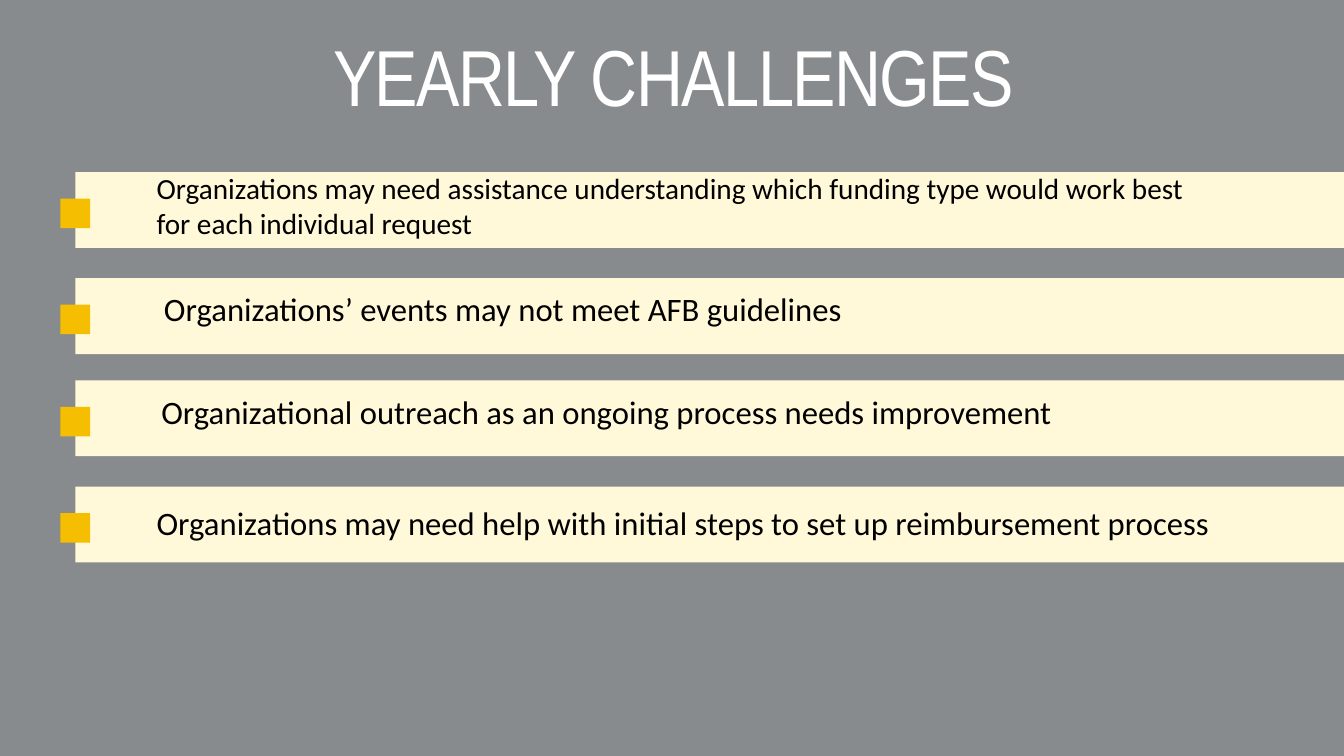
from pptx import Presentation
from pptx.dml.color import RGBColor
from pptx.enum.shapes import MSO_SHAPE as Shape
from pptx.enum.text import MSO_ANCHOR as Anchor, MSO_AUTO_SIZE as AutoSize, PP_ALIGN as Align
from pptx.util import Inches, Pt

W, H = Inches(20), Inches(11.25)
GREY = RGBColor(0x88, 0x8B, 0x8D)
CREAM = RGBColor(0xFF, 0xF9, 0xD9)
GOLD = RGBColor(0xF6, 0xBE, 0x00)
BLACK = RGBColor(0x00, 0x00, 0x00)
WHITE = RGBColor(0xFF, 0xFF, 0xFF)

BAR_X, BAR_H = 5.6, 10.04
MARK_X, MARK_DY, MARK_W, MARK_H = 4.5, 3.5, 2.2, 3.91

# Bar top, text left, top, width and height in percent of the slide; size and leading in points
CHALLENGES = [
    (22.76, (11.65, 22.49, 77.55, 9.96), 31.3, 37.5,
     "Organizations may need assistance understanding which funding type "
     "would work best for each individual request"),
    (36.8, (12.2, 38.22, 82.4, 5.96), 35, 42,
     "Organizations’ events may not meet AFB guidelines"),
    (50.31, (12, 51.82, 82.4, 5.96), 35, 42,
     "Organizational outreach as an ongoing process needs improvement"),
    (64.36, (11.65, 66.49, 82.4, 5.96), 35, 42,
     "Organizations may need help with initial steps to set up reimbursement process"),
]


def place(x, y, w, h):
    """Turn percentages of the slide's size into lengths."""
    return int(W * x / 100), int(H * y / 100), int(W * w / 100), int(H * h / 100)


def add_block(s, box, color):
    """Add a plain filled rectangle."""
    sp = s.shapes.add_shape(Shape.RECTANGLE, *place(*box))
    sp.shadow.inherit = False
    sp.fill.solid()
    sp.fill.fore_color.rgb = color
    sp.line.fill.background()


def write(sp, text, font, size, leading, color, align=Align.LEFT):
    """Write one paragraph into a shape without margins and return its run."""
    tf = sp.text_frame
    tf.word_wrap = True
    tf.auto_size = AutoSize.SHAPE_TO_FIT_TEXT
    tf.vertical_anchor = Anchor.TOP
    tf.margin_left = tf.margin_top = tf.margin_right = tf.margin_bottom = 0
    p = tf.paragraphs[0]
    p.alignment = align
    p.line_spacing = Pt(leading)
    r = p.add_run()
    r.text = text
    r.font.name = font
    r.font.size = Pt(size)
    r.font.color.rgb = color
    return r


def add_title(s, text):
    """Move and format the title placeholder."""
    sp = s.shapes.title
    sp.left, sp.top, sp.width, sp.height = place(5.65, 3.56, 88.9, 12.53)
    r = write(sp, text, "Arial Narrow", 85, 102, WHITE, Align.CENTER)
    r.font._element.set("spc", "-170")


def add_challenge(s, top, box, size, leading, text):
    """Add a bar running to the right edge, its square marker and its text."""
    add_block(s, (BAR_X, top, 100 - BAR_X, BAR_H), CREAM)
    add_block(s, (MARK_X, top + MARK_DY, MARK_W, MARK_H), GOLD)
    write(s.shapes.add_textbox(*place(*box)), text, "Calibri", size, leading, BLACK)


def main():
    """Build the slide and save it."""
    prs = Presentation()
    prs.slide_width, prs.slide_height = W, H
    s = prs.slides.add_slide(prs.slide_layouts[5])
    s.background.fill.solid()
    s.background.fill.fore_color.rgb = GREY
    add_title(s, "YEARLY CHALLENGES")
    for challenge in CHALLENGES:
        add_challenge(s, *challenge)
    prs.save("out.pptx")


if __name__ == "__main__":
    main()
